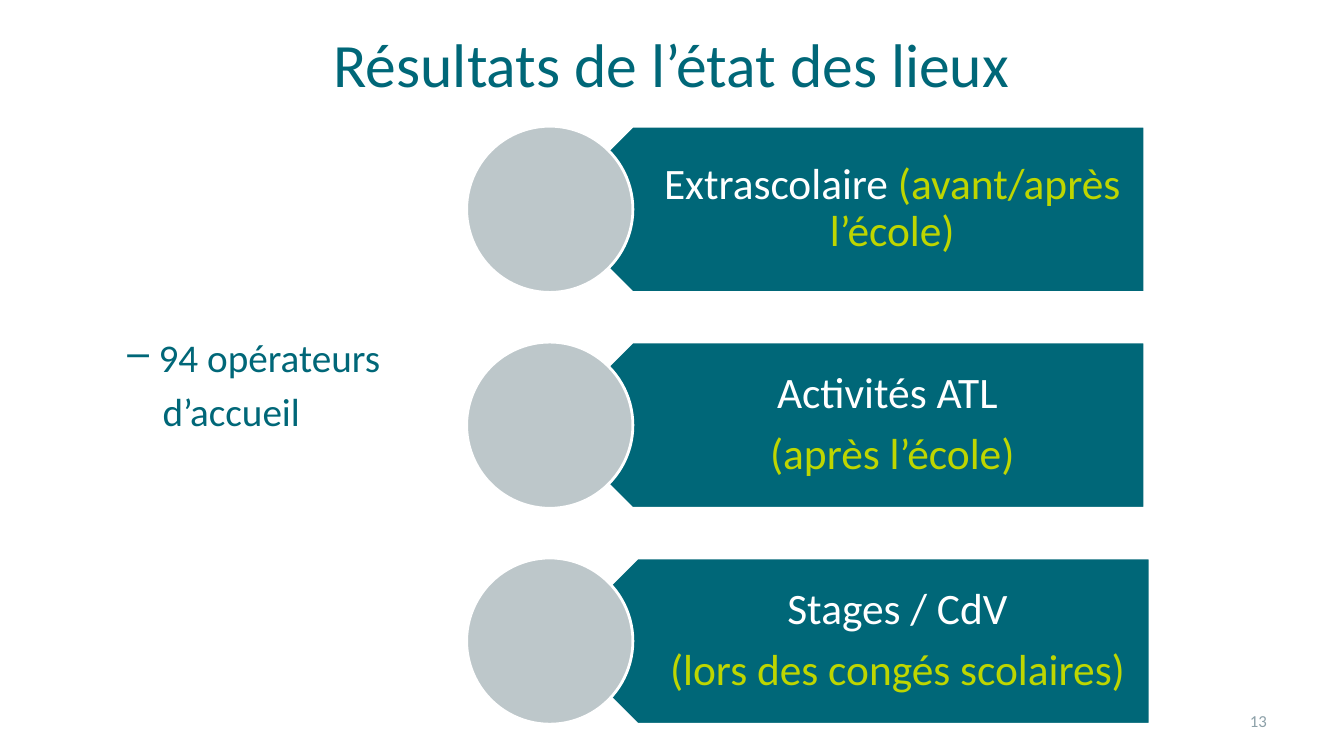
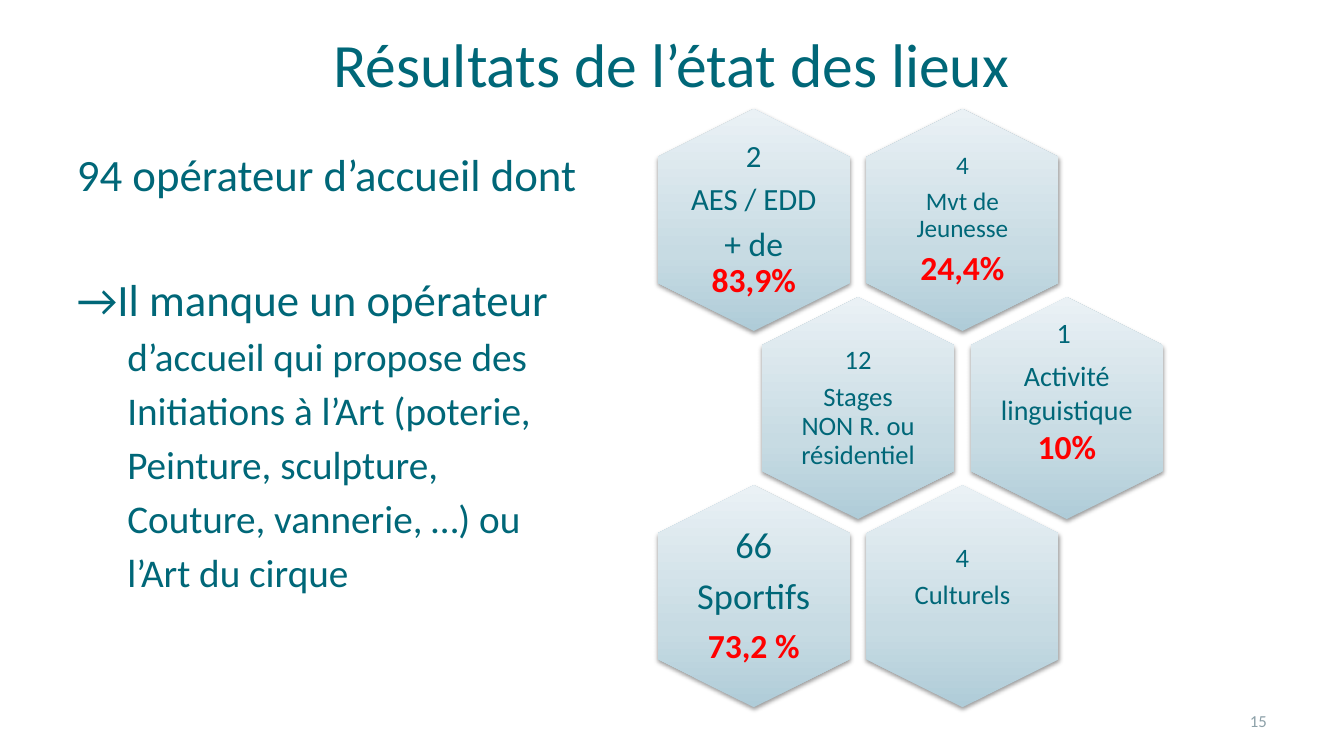
from lxml.etree import SubElement
from pptx import Presentation
from pptx.dml.color import RGBColor
from pptx.enum.shapes import MSO_SHAPE
from pptx.enum.text import MSO_ANCHOR, PP_ALIGN
from pptx.oxml.ns import qn
from pptx.util import Cm, Pt

TEAL, LIME, RED, WHITE = "006778", "BED600", "FF0000", "FFFFFF"
GREY, PALE_GREY = "BDC7CA", "8CA0A8"
HEXAGON_STOPS = [(0, "AFCCD8"), (35, "C7DBE3"), (100, "EAF1F5")]
FONT = "Calibri"
TITLE = "Résultats de l’état des lieux"
INSETS = (0.25, 0.13, 0.25, 0.13)


def color(value):
    return RGBColor.from_string(value)


def apply(target, values):
    for name, value in values.items():
        setattr(target, name, value)


def add_xml(parent, tag, **attributes):
    return SubElement(parent, qn(tag), {name: str(value) for name, value in attributes.items()})


class SlideWriter:
    """Holds the shared style and the current slide."""

    def __init__(self):
        self.deck = Presentation()
        apply(self.deck, {"slide_width": Cm(33.87), "slide_height": Cm(19.05)})
        self.page = None

    def new_page(self, number):
        self.page = self.deck.slides.add_slide(self.deck.slide_layouts[6])
        centered = {"alignment": PP_ALIGN.CENTER}
        self.text((1.69, 0, 30.48, 3.18), [([(TITLE, {"size": 44})], centered)])
        right = {"alignment": PP_ALIGN.RIGHT}
        self.text((24.28, 17.66, 7.9, 1.01),
                  [([(number, {"size": 12, "color": PALE_GREY})], right)])

    def text(self, area, paragraphs, anchor=MSO_ANCHOR.MIDDLE, insets=INSETS):
        """Each paragraph is (spans, format); each span is (text, style)."""
        box = self.page.shapes.add_textbox(*map(Cm, area))
        frame = box.text_frame
        sides = ("margin_left", "margin_top", "margin_right", "margin_bottom")
        apply(frame, {"word_wrap": True, "vertical_anchor": anchor,
                      **dict(zip(sides, map(Cm, insets)))})
        for index, (spans, layout) in enumerate(paragraphs):
            para = frame.add_paragraph() if index else frame.paragraphs[0]
            layout = dict(layout)
            self.indent(para, layout.pop("left", 0), layout.pop("first", 0),
                        layout.pop("bullet", None))
            apply(para, layout)
            for content, style in spans:
                self.span(para, content, **style)

    def span(self, para, content, size, color_value=TEAL, **style):
        span = para.add_run()
        span.text = content
        ink = style.pop("color", color_value)
        apply(span.font, {"name": FONT, "size": Pt(size), **style})
        span.font.color.rgb = color(ink)

    def indent(self, para, left, first, bullet):
        properties = para._p.get_or_add_pPr()
        properties.set("marL", str(Cm(left)))
        properties.set("indent", str(Cm(first)))
        if bullet:
            add_xml(properties, "a:buChar", char=bullet)

    def body(self, top, height, paragraphs):
        self.text((1.69, top, 14.3, height), paragraphs, MSO_ANCHOR.TOP)

    def label(self, area, paragraphs, insets, gap):
        """Centred tight text, with an equal gap between paragraphs."""
        self.text(area, [(spans, {"alignment": PP_ALIGN.CENTER, "line_spacing": 0.9,
                                  "space_before": Pt(gap if index else 0), **layout})
                         for index, (spans, layout) in enumerate(paragraphs)],
                  insets=insets)

    def shape(self, kind, area, fill=None, rotation=0):
        shape = self.page.shapes.add_shape(kind, *map(Cm, area))
        shape.rotation = rotation
        shape.shadow.inherit = False
        if fill:
            shape.fill.solid()
            shape.fill.fore_color.rgb = color(fill)
            shape.line.color.rgb = color(WHITE)
            shape.line.width = Pt(2)
        else:
            shape.line.fill.background()
        return shape

    def hexagon(self, area):
        shape = self.shape(MSO_SHAPE.HEXAGON, area, rotation=90)
        # Three-stop gradient, kept upright whatever the rotation
        shape.fill.gradient()
        gradient = shape._element.spPr.find(qn("a:gradFill"))
        gradient.set("rotWithShape", "0")
        for child in list(gradient):
            gradient.remove(child)
        stops = add_xml(gradient, "a:gsLst")
        for position, value in HEXAGON_STOPS:
            stop = add_xml(stops, "a:gs", pos=position * 1000)
            add_xml(stop, "a:srgbClr", val=value)
        add_xml(gradient, "a:lin", ang=270 * 60000, scaled=0)
        # Soft shadow underneath
        effects = shape._element.spPr.find(qn("a:effectLst"))
        shadow = add_xml(effects, "a:outerShdw", blurRad=Pt(3.1), dist=Pt(1.6),
                         dir=90 * 60000, rotWithShape=0)
        add_xml(add_xml(shadow, "a:srgbClr", val="000000"), "a:alpha", val=38000)


def care_types(writer):
    writer.new_page("13")
    # Count of operators
    style = {"size": 28}
    writer.body(8.28, 3.2, [
        ([("94 opérateurs", style)], {"left": 2.06, "first": -0.79, "bullet": "–"}),
        ([("d’accueil", style)], {"left": 2.16, "space_before": Pt(5)}),
    ])
    # Three banners, each led by a disc
    white, lime = {"size": 31, "color": WHITE}, {"size": 31, "color": LIME}
    banners = [
        (0, [[("Extrascolaire ", white), ("(avant/après l’école)", lime)]]),
        (0, [[("Activités ATL ", white)], [("(après l’école)", lime)]]),
        (0.13, [[("Stages / CdV", white)], [("(lors des congés scolaires)", lime)]]),
    ]
    side, step = 4.19, 5.44
    for row, (shift, lines) in enumerate(banners):
        top = 3.18 + row * step
        writer.shape(MSO_SHAPE.PENTAGON, (13.84 + shift, top, 15.01, side), TEAL, 180)
        writer.label((14.88 + shift, top, 13.97, side), [(line, {}) for line in lines],
                     (1.85, 0.33, 0.61, 0.33), 10)
        writer.shape(MSO_SHAPE.OVAL, (11.76, top, side, side), GREY)


def operators(writer):
    writer.new_page("15")
    # What is missing
    large, normal = {"size": 32}, {"size": 28}
    details = ["d’accueil qui propose des", "Initiations à l’Art (poterie,",
               "Peinture, sculpture,", "Couture, vannerie, …) ou", "l’Art du cirque"]
    writer.body(3.56, 13.46, [
        ([("94 opérateur d’accueil dont", large)], {}),
        ([("→Il manque un opérateur", large)], {"space_before": Pt(51)}),
        *[([(line, normal)], {"left": 1.27, "space_before": Pt(5)}) for line in details],
    ])
    # Honeycomb: column, row, text size, inset, extra inset below, paragraphs
    red = {"size": 24, "color": RED, "bold": True}
    single = {"line_spacing": 1.0}
    cells = [
        (0, 0, 22, 0, 0, ["2", "AES / EDD", [("+ de ", {"size": 24}), ("83,9%", red)]]),
        (1, 0, 18, 0.18, 0, ["4", "Mvt de Jeunesse", [("24,4%", red)]]),
        (0.5, 1, 19, 0.2, 0, ["12", "Stages NON R. ou résidentiel"]),
        (1.5, 1, 20, 0, 0.78, ["1 ", ("Activité linguistique", single),
                               ([("10%", red)], {**single, "space_before": Pt(0)})]),
        (0, 2, 26, 0, 0, ["66", "Sportifs", [("73,2 %", red)]]),
        (1, 2, 19, 0.2, 0.95, ["4", "Culturels"]),
    ]
    for column, row, size, inset, below, lines in cells:
        left, top = 16.2 + column * 5.26, 3.12 + row * 4.74
        writer.hexagon((left, top, 5.59, 4.85))
        paragraphs = []
        for line in lines:
            content, layout = line if isinstance(line, tuple) else (line, {})
            spans = [(content, {"size": size})] if isinstance(content, str) else content
            paragraphs.append((spans, layout))
        writer.label((left + 1.12, top + 0.51, 3.35, 3.84), paragraphs,
                     (inset, inset, inset, inset + below), size * 0.33)


def main():
    writer = SlideWriter()
    care_types(writer)
    operators(writer)
    writer.deck.save("out.pptx")


if __name__ == "__main__":
    main()
